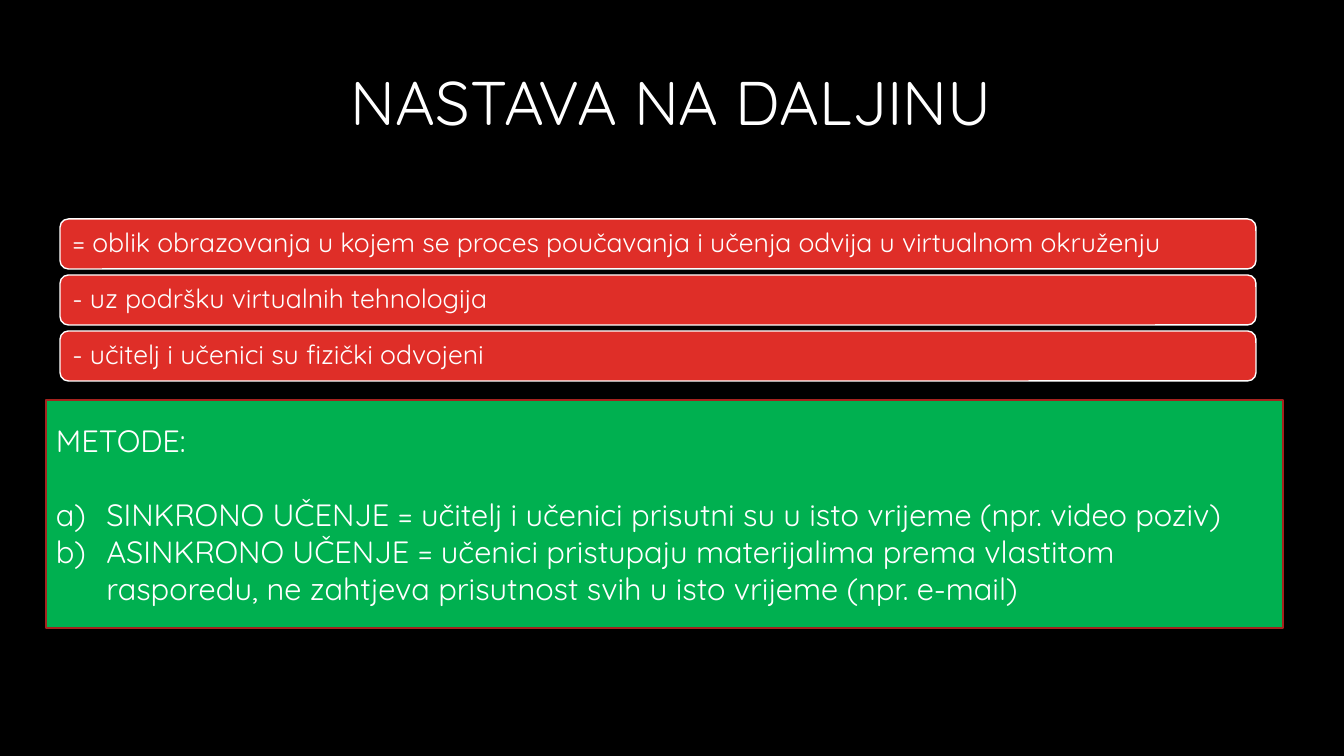
import pptx
import pptx.util
import pptx.dml.color
import pptx.enum.shapes
import pptx.enum.text
import pptx.oxml.xmlchemy

RGBColor = pptx.dml.color.RGBColor
MSO_SHAPE = pptx.enum.shapes.MSO_SHAPE
PP_ALIGN = pptx.enum.text.PP_ALIGN

BLACK = RGBColor(0x00, 0x00, 0x00)
WHITE = RGBColor(0xFF, 0xFF, 0xFF)
RED = RGBColor(0xDF, 0x2E, 0x28)
DARK_RED = RGBColor(0xA5, 0x22, 0x1E)
GREEN = RGBColor(0x00, 0xB0, 0x50)

EMU_PER_PX = 914400 / 100.8
SLIDE_SIZE = (1344, 756)


def px(length):
    return pptx.util.Emu(round(length * EMU_PER_PX))


class SlideBuilder:
    font_name = "Quicksand"

    def __init__(self, presentation):
        self.slide = presentation.slides.add_slide(presentation.slide_layouts[5])
        self.slide.background.fill.solid()
        self.slide.background.fill.fore_color.rgb = BLACK

    def set_text(self, shape, lines, size, align=PP_ALIGN.LEFT, line_spacing=1.0):
        text_frame = shape.text_frame
        text_frame.text = "\n".join(lines)
        text_frame.word_wrap = True
        text_frame.auto_size = pptx.enum.text.MSO_AUTO_SIZE.NONE
        text_frame.vertical_anchor = pptx.enum.text.MSO_ANCHOR.MIDDLE
        text_frame.margin_left = text_frame.margin_right = px(10)
        text_frame.margin_top = text_frame.margin_bottom = px(5)
        for paragraph in text_frame.paragraphs:
            paragraph.alignment = align
            paragraph.line_spacing = line_spacing
            for run in paragraph.runs:
                run.font.name = self.font_name
                run.font.size = pptx.util.Pt(size)
                run.font.color.rgb = WHITE

    def title(self, text, left, top, width, height):
        title = self.slide.shapes.title
        title.left, title.top = px(left), px(top)
        title.width, title.height = px(width), px(height)
        self.set_text(title, [text], 44, PP_ALIGN.CENTER, 0.9)

    def box(self, kind, left, top, width, height, fill, line):
        shape = self.slide.shapes.add_shape(kind, px(left), px(top), px(width), px(height))
        shape.shadow.inherit = False
        shape.fill.solid()
        shape.fill.fore_color.rgb = fill
        shape.line.color.rgb = line
        shape.line.width = pptx.util.Pt(1)
        return shape

    def bar(self, text, left, top, width, height):
        bar = self.box(MSO_SHAPE.ROUNDED_RECTANGLE, left, top, width, height, RED, WHITE)
        self.set_text(bar, [text], 19, line_spacing=0.9)

    def lettered_panel(self, heading, items, left, top, width, height):
        panel = self.box(MSO_SHAPE.RECTANGLE, left, top, width, height, GREEN, DARK_RED)
        self.set_text(panel, [heading, *items], 22)
        item_paragraphs = panel.text_frame.paragraphs[1:]
        item_paragraphs[0].space_before = pptx.util.Pt(26.5)
        for paragraph in item_paragraphs:
            self.letter(paragraph)

    def letter(self, paragraph):
        properties = paragraph._p.get_or_add_pPr()
        properties.set("marL", str(pptx.util.Inches(0.5)))
        properties.set("indent", str(-pptx.util.Inches(0.5)))
        bullet_font = pptx.oxml.xmlchemy.OxmlElement("a:buFont")
        bullet_font.set("typeface", self.font_name)
        numbering = pptx.oxml.xmlchemy.OxmlElement("a:buAutoNum")
        numbering.set("type", "alphaLcParenR")
        properties.extend([bullet_font, numbering])


def main():
    presentation = pptx.Presentation()
    presentation.slide_width, presentation.slide_height = map(px, SLIDE_SIZE)
    builder = SlideBuilder(presentation)

    # Title
    builder.title("NASTAVA NA DALJINU", 60, 60, 1223, 91)

    # Definition bars
    definitions = [
        "= oblik obrazovanja u kojem se proces poučavanja i učenja odvija u virtualnom okruženju",
        "- uz podršku virtualnih tehnologija",
        "- učitelj i učenici su fizički odvojeni",
    ]
    for index, definition in enumerate(definitions):
        builder.bar(definition, 60, 219 + 56 * index, 1196, 50)

    # Methods panel
    methods = [
        "SINKRONO UČENJE = učitelj i učenici prisutni su u isto vrijeme (npr. video poziv)",
        "ASINKRONO UČENJE = učenici pristupaju materijalima prema vlastitom rasporedu, "
        "ne zahtjeva prisutnost svih u isto vrijeme (npr. e-mail)",
    ]
    builder.lettered_panel("METODE:", methods, 46, 400, 1237, 228)

    presentation.save("out.pptx")


if __name__ == "__main__":
    main()
